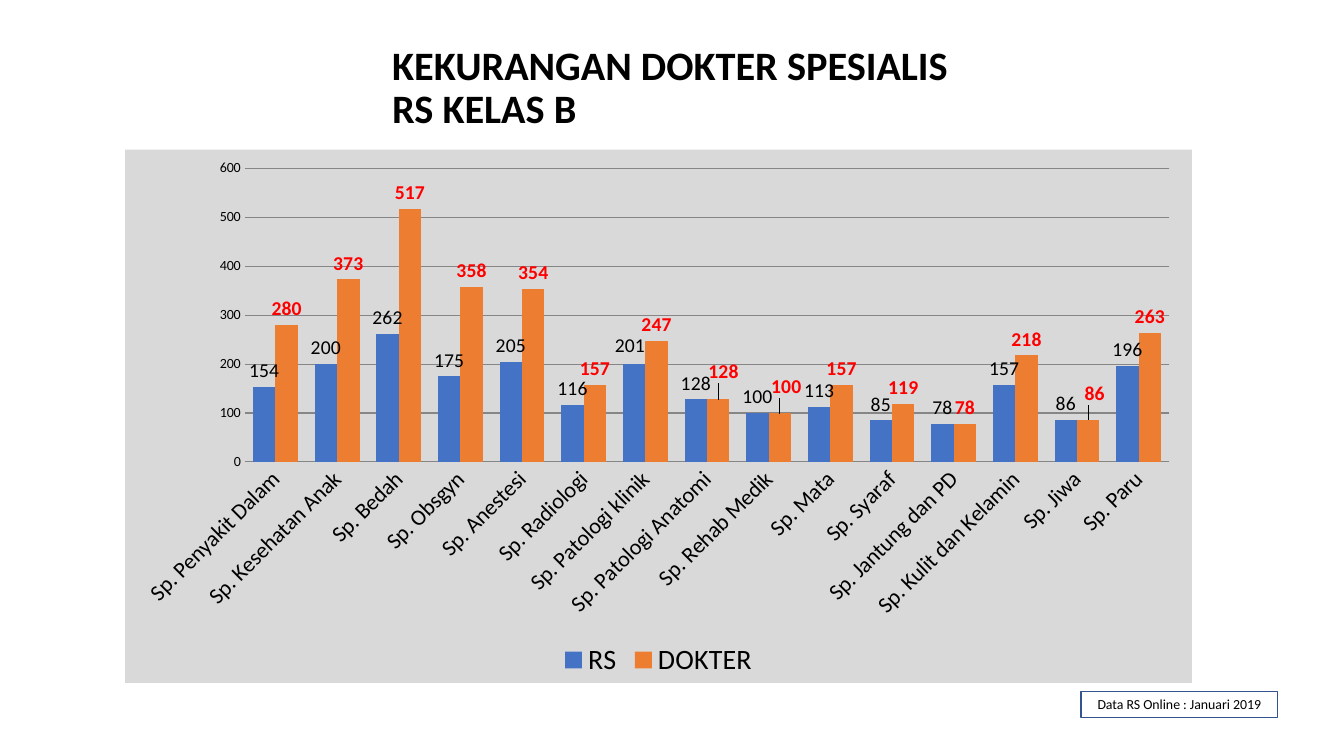
import pptx
import pptx.chart.data
import pptx.dml.color
import pptx.enum.chart
import pptx.enum.shapes
import pptx.enum.text
import pptx.oxml
import pptx.oxml.ns
import pptx.util

INK = {"text": "000000", "panel": "D9D9D9", "rs": "4472C4", "doc": "ED7D31",
       "alert": "FF0000", "grid": "868686", "edge": "325491"}
COLS, ROWS = 160, 90  # grid cells of 1/12 inch

# Specialty, hospitals short of it, doctors missing
DATA = [
    ("Sp. Penyakit Dalam", 154, 280), ("Sp. Kesehatan Anak", 200, 373),
    ("Sp. Bedah", 262, 517), ("Sp. Obsgyn", 175, 358),
    ("Sp. Anestesi", 205, 354), ("Sp. Radiologi", 116, 157),
    ("Sp. Patologi klinik", 201, 247), ("Sp. Patologi Anatomi", 128, 128),
    ("Sp. Rehab Medik", 100, 100), ("Sp. Mata", 113, 157),
    ("Sp. Syaraf", 85, 119), ("Sp. Jantung dan PD", 78, 78),
    ("Sp. Kulit dan Kelamin", 157, 218), ("Sp. Jiwa", 86, 86),
    ("Sp. Paru", 196, 263),
]
# Name, bar colour, label format, labels moved aside (index: share of chart)
SERIES = [
    ("RS", "rs", {"size": 14}, {6: (-0.004, -0.004)}),
    ("DOKTER", "doc", {"size": 14, "color": "alert", "bold": True},
     {7: (0.005, -0.022), 8: (0.006, -0.02), 13: (0.006, -0.02)}),
]


def rgb(name):
    return pptx.dml.color.RGBColor.from_string(INK[name])


def style(font, size, color="text", bold=False, face="Calibri"):
    font.name, font.size, font.bold = face, pptx.util.Pt(size), bold
    font.color.rgb = rgb(color)


def write(frame, text, align="LEFT", anchor="TOP", space=1.0, **look):
    frame.word_wrap = True
    frame.vertical_anchor = getattr(pptx.enum.text.MSO_ANCHOR, anchor)
    para = frame.paragraphs[0]
    para.text = text
    para.alignment = getattr(pptx.enum.text.PP_ALIGN, align)
    para.line_spacing = space
    for run in para.runs:
        style(run.font, **look)


def layout(x, y, w=None, h=None):
    """Manual chart layout; with a size it fixes the inner plot area."""
    tags = [("x", x), ("y", y)]
    if w:
        tags = [("layoutTarget", "inner"), ("xMode", "edge"),
                ("yMode", "edge")] + tags + [("w", w), ("h", h)]
    body = "".join(f'<c:{tag} val="{val}"/>' for tag, val in tags)
    return pptx.oxml.parse_xml(
        f'<c:layout {pptx.oxml.ns.nsdecls("c")}>'
        f'<c:manualLayout>{body}</c:manualLayout></c:layout>')


class Board:
    def __init__(self):
        self.deck = pptx.Presentation()
        self.deck.slide_width = pptx.util.Inches(13.33)
        self.deck.slide_height = pptx.util.Inches(7.5)
        self.slide = self.deck.slides.add_slide(self.deck.slide_layouts[6])

    def cells(self, x, y, w, h):
        dx, dy = self.deck.slide_width / COLS, self.deck.slide_height / ROWS
        return [round(v) for v in (x * dx, y * dy, w * dx, h * dy)]

    def text(self, spot, words, **look):
        box = self.slide.shapes.add_textbox(*self.cells(*spot))
        write(box.text_frame, words, **look)

    def box(self, spot, words, **look):
        kind = pptx.enum.shapes.MSO_SHAPE.RECTANGLE
        rect = self.slide.shapes.add_shape(kind, *self.cells(*spot))
        rect.shadow.inherit = False
        rect.fill.background()
        rect.line.color.rgb = rgb("edge")
        rect.line.width = pptx.util.Pt(1)
        write(rect.text_frame, words, **look)

    def bars(self, spot):
        enum = pptx.enum.chart
        data = pptx.chart.data.CategoryChartData()
        names, *values = zip(*DATA)
        data.categories = names
        for (name, *_), vals in zip(SERIES, values):
            data.add_series(name, vals)
        chart = self.slide.shapes.add_chart(
            enum.XL_CHART_TYPE.COLUMN_CLUSTERED, *self.cells(*spot), data).chart
        style(chart.font, 10)
        chart.has_title = False

        # Grey panel and plot area
        root = chart.element
        root.find(pptx.oxml.ns.qn("c:chart")).addnext(pptx.oxml.parse_xml(
            f'<c:spPr {pptx.oxml.ns.nsdecls("c", "a")}><a:solidFill>'
            f'<a:srgbClr val="{INK["panel"]}"/></a:solidFill>'
            '<a:ln><a:noFill/></a:ln></c:spPr>'))
        area = root.xpath("c:chart/c:plotArea")[0]
        for old in area.xpath("c:layout"):
            area.remove(old)
        area.insert(0, layout(0.112, 0.035, 0.867, 0.551))

        # Axes
        cat, val = chart.category_axis, chart.value_axis
        for axis in (cat, val):
            axis.major_tick_mark = enum.XL_TICK_MARK.NONE
            axis.minor_tick_mark = enum.XL_TICK_MARK.NONE
        style(cat.tick_labels.font, 16)
        cat.format.line.color.rgb = rgb("grid")
        area.xpath("c:catAx/c:txPr/a:bodyPr")[0].set("rot", "-2700000")
        style(val.tick_labels.font, 10)
        val.minimum_scale, val.maximum_scale, val.major_unit = 0, 600, 100
        val.format.line.fill.background()
        val.has_major_gridlines = True
        val.major_gridlines.format.line.color.rgb = rgb("grid")

        # Legend
        chart.has_legend = True
        chart.legend.position = enum.XL_LEGEND_POSITION.BOTTOM
        chart.legend.include_in_layout = False
        style(chart.legend.font, 20)

        # Bars and their labels
        plot = chart.plots[0]
        plot.gap_width, plot.overlap = 75, 0
        plot.vary_by_categories = False
        for row, (_, color, look, moved) in zip(plot.series, SERIES):
            row.format.fill.solid()
            row.format.fill.fore_color.rgb = rgb(color)
            tags = row.data_labels
            tags.show_value = True
            tags.position = enum.XL_LABEL_POSITION.OUTSIDE_END
            style(tags.font, **look)
            for i, shift in moved.items():
                tag = row.points[i].data_label
                style(tag.font, **look)
                tag.position = enum.XL_LABEL_POSITION.OUTSIDE_END
                idx = tags._element.xpath(f'c:dLbl/c:idx[@val="{i}"]')[0]
                idx.addnext(layout(*shift))


def main():
    board = Board()
    # Title
    board.text((45.5, 4.8, 103.4, 17.4),
               "KEKURANGAN DOKTER SPESIALIS\nRS KELAS B",
               size=28.8, bold=True, space=0.9)
    # Shortage per specialty
    board.bars((14.9, 17.8, 127, 63.5))
    # Source of the data
    board.box((128.7, 82.3, 23.4, 3.1), "Data RS Online : Januari 2019",
              size=9.9, align="CENTER", anchor="MIDDLE")
    board.deck.save("out.pptx")


if __name__ == "__main__":
    main()
